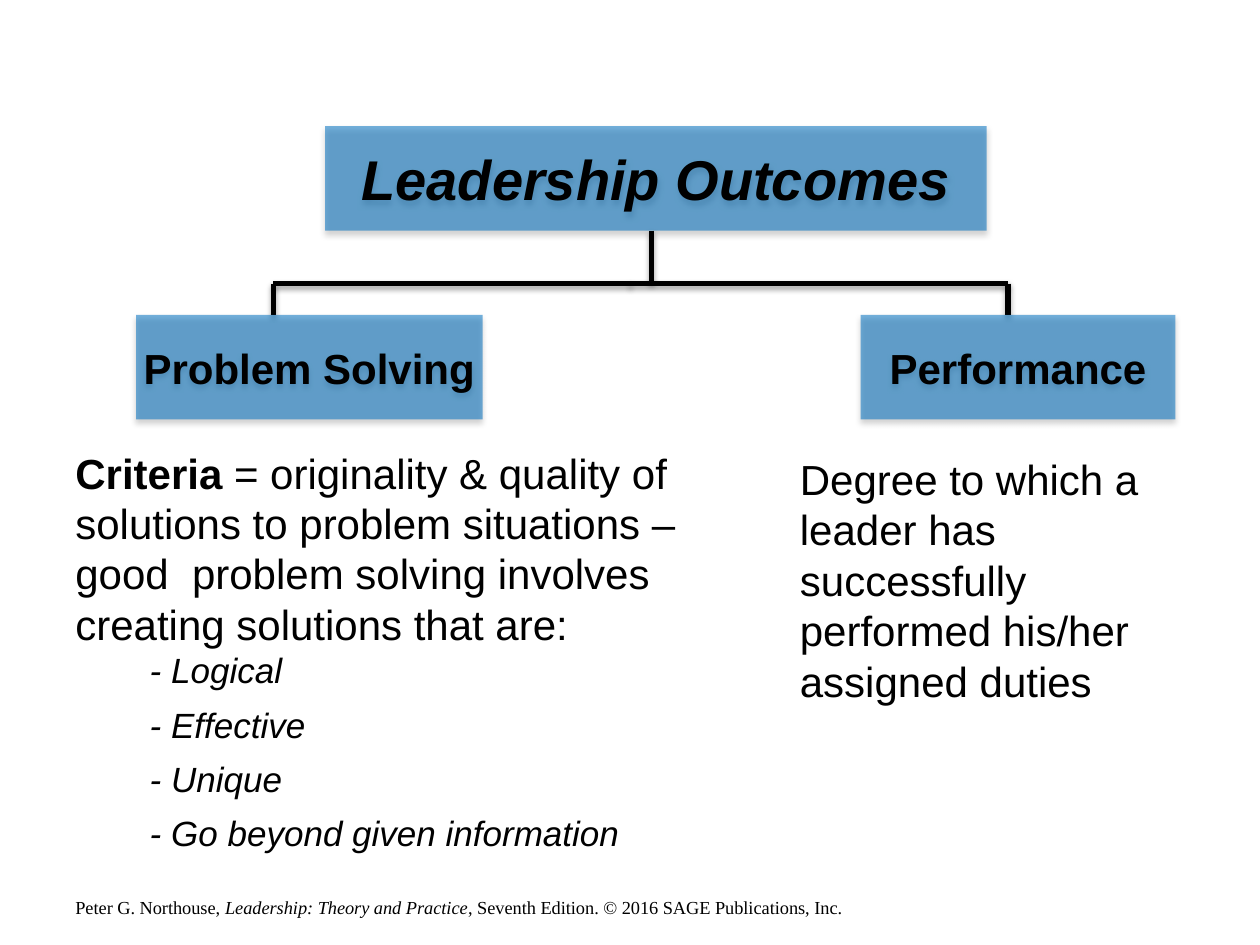
import dataclasses

import pptx
import pptx.dml.color
import pptx.enum.shapes
import pptx.enum.text
import pptx.oxml.ns
import pptx.util
from lxml import etree

Inches = pptx.util.Inches
Pt = pptx.util.Pt
BLACK = "000000"
BLUE = "0070C0"


@dataclasses.dataclass
class Box:
    text: str
    left: float
    top: float
    width: float
    size: float = 24
    italic: bool = False
    height: float = 0.83


@dataclasses.dataclass
class Line:
    x1: float
    y1: float
    x2: float
    y2: float


@dataclasses.dataclass
class Run:
    text: str
    bold: bool = False
    italic: bool = False


@dataclasses.dataclass
class Para:
    runs: list[Run]
    size: float = 24
    font: str = "Arial"
    indent: float = 0
    after: float = 0


def paint(color, value: str) -> None:
    color.rgb = pptx.dml.color.RGBColor.from_string(value)


def style(font, name: str, size: float, bold: bool, italic: bool) -> None:
    font.name = name
    font.size = Pt(size)
    font.bold = bold
    font.italic = italic
    paint(font.color, BLACK)


def add_node(parent, tag: str, **attrs):
    node = etree.SubElement(parent, pptx.oxml.ns.qn(tag))
    for key, value in attrs.items():
        node.set(key, str(value))
    return node


def add_shadow(shape, alpha: float, blur: float, dist: float) -> None:
    """Cast a soft black shadow straight down; call after fill and line."""
    effects = add_node(shape.element.spPr, "a:effectLst")
    shadow = add_node(effects, "a:outerShdw", blurRad=Pt(blur), dist=Pt(dist),
                      dir=90 * 60000, rotWithShape=0)
    tint = add_node(shadow, "a:srgbClr", val=BLACK)
    add_node(tint, "a:alpha", val=alpha * 1000)


def draw_box(shape, box: Box) -> None:
    shape.left, shape.top = Inches(box.left), Inches(box.top)
    shape.width, shape.height = Inches(box.width), Inches(box.height)
    shape.fill.solid()
    paint(shape.fill.fore_color, BLUE)
    tint = shape.element.spPr.find(".//" + pptx.oxml.ns.qn("a:srgbClr"))
    add_node(tint, "a:alpha", val=54000)
    shape.line.fill.background()
    add_shadow(shape, 32, 3.5, 2.2)

    frame = shape.text_frame
    frame.text = box.text
    frame.word_wrap = False
    frame.auto_size = pptx.enum.text.MSO_AUTO_SIZE.NONE
    frame.vertical_anchor = pptx.enum.text.MSO_ANCHOR.MIDDLE
    para = frame.paragraphs[0]
    para.alignment = pptx.enum.text.PP_ALIGN.CENTER
    style(para.runs[0].font, "Arial", box.size, True, box.italic)


def draw_line(slide, line: Line) -> None:
    link = slide.shapes.add_connector(
        pptx.enum.shapes.MSO_CONNECTOR.STRAIGHT,
        Inches(line.x1), Inches(line.y1), Inches(line.x2), Inches(line.y2))
    paint(link.line.color, BLACK)
    link.line.width = Pt(3)
    add_shadow(link, 35, 3.1, 1.8)


def draw_text(slide, left: float, top: float, width: float, height: float,
              paras: list[Para]) -> None:
    shape = slide.shapes.add_textbox(
        Inches(left), Inches(top), Inches(width), Inches(height))
    frame = shape.text_frame
    frame.word_wrap = True
    frame.auto_size = pptx.enum.text.MSO_AUTO_SIZE.SHAPE_TO_FIT_TEXT
    for i, item in enumerate(paras):
        para = frame.add_paragraph() if i else frame.paragraphs[0]
        if item.indent:
            props = para._p.get_or_add_pPr()
            props.set("marL", str(Inches(item.indent)))
            props.set("indent", "0")
        if item.after:
            para.space_after = Pt(item.after)
        for part in item.runs:
            run = para.add_run()
            run.text = part.text
            style(run.font, item.font, item.size, part.bold, part.italic)


HEAD = Box("Leadership Outcomes", 2.58, 1, 5.25, size=32, italic=True)
BOXES = [
    Box("Problem Solving", 1.08, 2.5, 2.75),
    Box("Performance", 6.83, 2.5, 2.5),
]

# Tree: a trunk, a crossbar and two drops
LEFT, TRUNK, RIGHT, BAR = 2.17, 5.17, 8, 2.25
LINES = [
    Line(LEFT, BAR, LEFT, 2.5),
    Line(RIGHT, BAR, RIGHT, 2.5),
    Line(TRUNK, 1.83, TRUNK, BAR),
    Line(5, BAR, RIGHT, BAR),
    Line(5, BAR, LEFT, BAR),
]

TRAITS = ["Logical", "Effective", "Unique", "Go beyond given information"]
CRITERIA = [Para([
    Run("Criteria", bold=True),
    Run(" = originality & quality of solutions to problem situations – "
        "good  problem solving involves creating solutions that are:"),
])] + [Para([Run(f"- {trait}", italic=True)], size=20, indent=0.59, after=7)
       for trait in TRAITS]
DUTIES = [Para([Run("Degree to which a leader has successfully performed "
                    "his/her assigned duties")])]
CREDIT = [Para([
    Run("Peter G. Northouse, "),
    Run("Leadership: Theory and Practice", italic=True),
    Run(", Seventh Edition. © 2016 SAGE Publications, Inc."),
], size=10.5, font="Times New Roman")]


def main() -> None:
    deck = pptx.Presentation()
    deck.slide_width, deck.slide_height = Inches(10), Inches(7.5)
    slide = deck.slides.add_slide(deck.slide_layouts[5])

    # Chart of boxes
    draw_box(slide.shapes.title, HEAD)
    for line in LINES:
        draw_line(slide, line)
    for box in BOXES:
        shape = slide.shapes.add_shape(
            pptx.enum.shapes.MSO_SHAPE.RECTANGLE, 0, 0, 0, 0)
        draw_box(shape, box)

    # Notes under the boxes, and the source line
    draw_text(slide, 0.5, 3.5, 5.17, 3.37, CRITERIA)
    draw_text(slide, 6.25, 3.55, 3.08, 2.12, DUTIES)
    draw_text(slide, 0.5, 7.06, 9.5, 0.28, CREDIT)

    deck.save("out.pptx")


if __name__ == "__main__":
    main()
